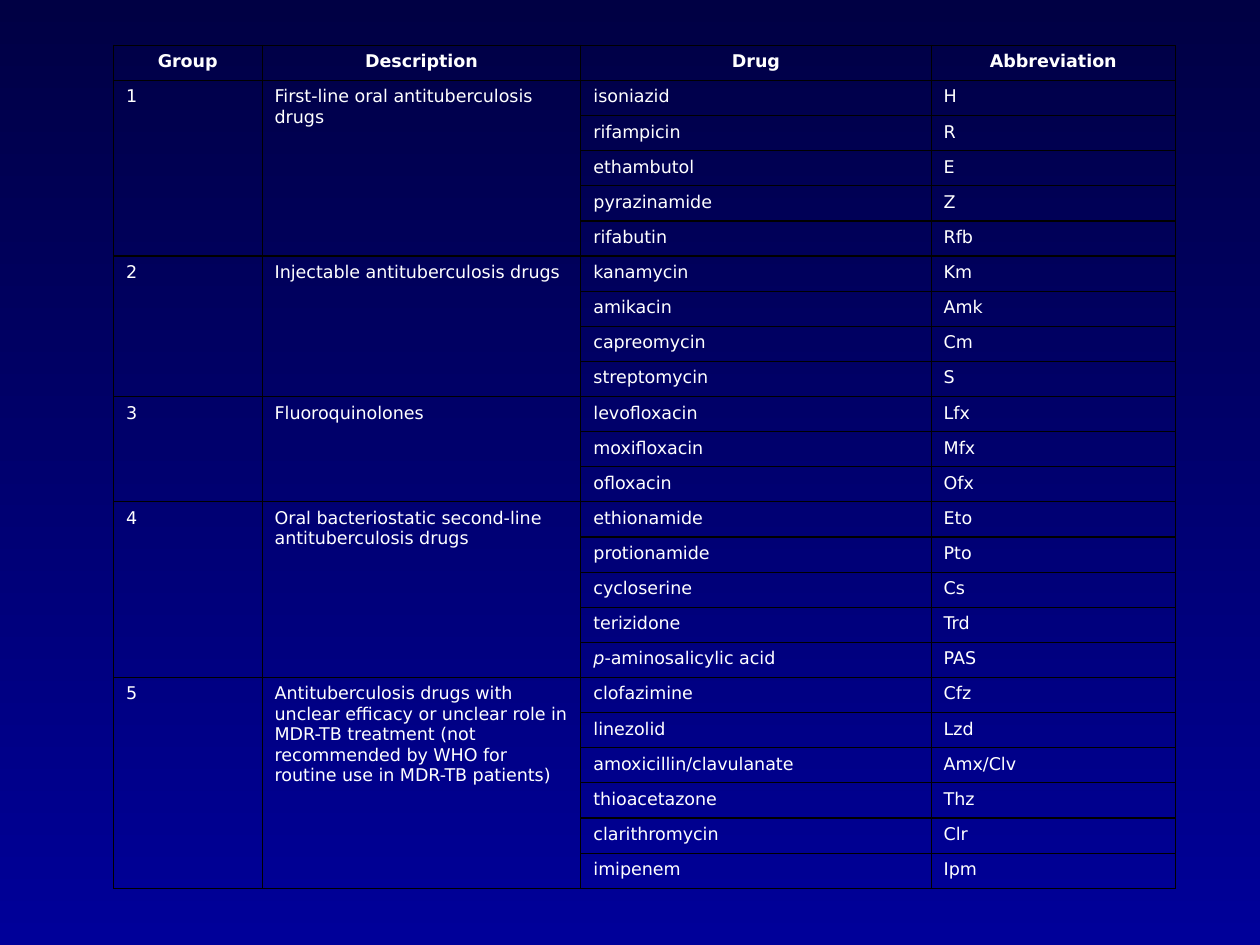
from dataclasses import dataclass

from lxml.etree import SubElement
from pptx import Presentation
from pptx.dml.color import RGBColor
from pptx.enum.text import PP_ALIGN as Align
from pptx.oxml import parse_xml
from pptx.oxml.ns import nsdecls, qn
from pptx.util import Inches, Pt


@dataclass
class Drug:
    name: str
    abbreviation: str
    italic_prefix: str = ""


@dataclass
class DrugGroup:
    number: str
    description: str
    drugs: list[Drug]


# Content
HEADINGS = ["Group", "Description", "Drug", "Abbreviation"]
GROUPS = [
    DrugGroup("1", "First-line oral antituberculosis drugs", [
        Drug("isoniazid", "H"), Drug("rifampicin", "R"), Drug("ethambutol", "E"),
        Drug("pyrazinamide", "Z"), Drug("rifabutin", "Rfb")]),
    DrugGroup("2", "Injectable antituberculosis drugs", [
        Drug("kanamycin", "Km"), Drug("amikacin", "Amk"),
        Drug("capreomycin", "Cm"), Drug("streptomycin", "S")]),
    DrugGroup("3", "Fluoroquinolones", [
        Drug("levofloxacin", "Lfx"), Drug("moxifloxacin", "Mfx"),
        Drug("ofloxacin", "Ofx")]),
    DrugGroup("4", "Oral bacteriostatic second-line antituberculosis drugs", [
        Drug("ethionamide", "Eto"), Drug("protionamide", "Pto"),
        Drug("cycloserine", "Cs"), Drug("terizidone", "Trd"),
        Drug("-aminosalicylic acid", "PAS", italic_prefix="p")]),
    DrugGroup("5", "Antituberculosis drugs with unclear efficacy or unclear role in "
              "MDR-TB treatment (not recommended by WHO for routine use in "
              "MDR-TB patients)", [
        Drug("clofazimine", "Cfz"), Drug("linezolid", "Lzd"),
        Drug("amoxicillin/clavulanate", "Amx/Clv"), Drug("thioacetazone", "Thz"),
        Drug("clarithromycin", "Clr"), Drug("imipenem", "Ipm")]),
]

# Formats
TOP_BLUE, BOTTOM_BLUE, WHITE, BLACK = "000044", "000099", "FFFFFF", "000000"
BODY = {"name": "DejaVu Sans", "size": Pt(10), "bold": False, "italic": False}
HEADING = BODY | {"bold": True}
ITALIC = BODY | {"italic": True}
PLAIN_TABLE = {"first_row": False, "horz_banding": False}
COLUMN_WIDTHS = [1.18, 2.53, 2.78, 1.94]
TABLE_HEIGHT = 6.69


def set_all(target, values: dict) -> None:
    for attribute, value in values.items():
        setattr(target, attribute, value)


def set_colour(colour_format, colour: str) -> None:
    colour_format.rgb = RGBColor.from_string(colour)


def write(cell, text: str, font_values: dict = BODY, align=Align.LEFT) -> None:
    paragraph = cell.text_frame.paragraphs[0]
    paragraph.alignment = align
    run = paragraph.add_run()
    run.text = text
    set_all(run.font, font_values)
    set_colour(run.font.color, WHITE)


def outline(cell, colour: str, width: int) -> None:
    """Clear the cell's fill and rule all four sides."""
    cell.fill.background()
    properties = cell._tc.get_or_add_tcPr()
    for position, side in enumerate(("lnL", "lnR", "lnT", "lnB")):
        line = parse_xml(f'<a:{side} {nsdecls("a")} w="{width}"/>')
        fill = SubElement(line, qn("a:solidFill"))
        SubElement(fill, qn("a:srgbClr"), val=colour)
        properties.insert(position, line)


def add_group(table, first_row: int, group: DrugGroup) -> int:
    """Fill one group's rows and return the row that follows."""
    last_row = first_row + len(group.drugs) - 1
    for column, text in enumerate((group.number, group.description)):
        table.cell(first_row, column).merge(table.cell(last_row, column))
        write(table.cell(first_row, column), text)
    for row, drug in enumerate(group.drugs, first_row):
        if drug.italic_prefix:
            write(table.cell(row, 2), drug.italic_prefix, ITALIC)
        write(table.cell(row, 2), drug.name)
        write(table.cell(row, 3), drug.abbreviation)
    return last_row + 1


def main() -> None:
    deck = Presentation()
    set_all(deck, {"slide_width": Inches(10), "slide_height": Inches(7.5)})
    slide = deck.slides.add_slide(deck.slide_layouts[6])

    # Background, dark at the top
    backdrop = slide.background.fill
    backdrop.gradient()
    backdrop.gradient_angle = 270
    for stop, colour in zip(backdrop.gradient_stops, (TOP_BLUE, BOTTOM_BLUE)):
        set_colour(stop.color, colour)

    # Table grid
    row_count = 1 + sum(len(group.drugs) for group in GROUPS)
    table = slide.shapes.add_table(
        row_count, len(HEADINGS), Inches(0.9), Inches(0.36),
        Inches(sum(COLUMN_WIDTHS)), Inches(TABLE_HEIGHT)).table
    set_all(table, PLAIN_TABLE)
    for column, width in zip(table.columns, COLUMN_WIDTHS):
        column.width = Inches(width)
    for cell in table.iter_cells():
        outline(cell, BLACK, Pt(0.75))

    # Headings and drug groups
    for column, heading in enumerate(HEADINGS):
        write(table.cell(0, column), heading, HEADING, Align.CENTER)
    next_row = 1
    for group in GROUPS:
        next_row = add_group(table, next_row, group)

    deck.save("out.pptx")


if __name__ == "__main__":
    main()
